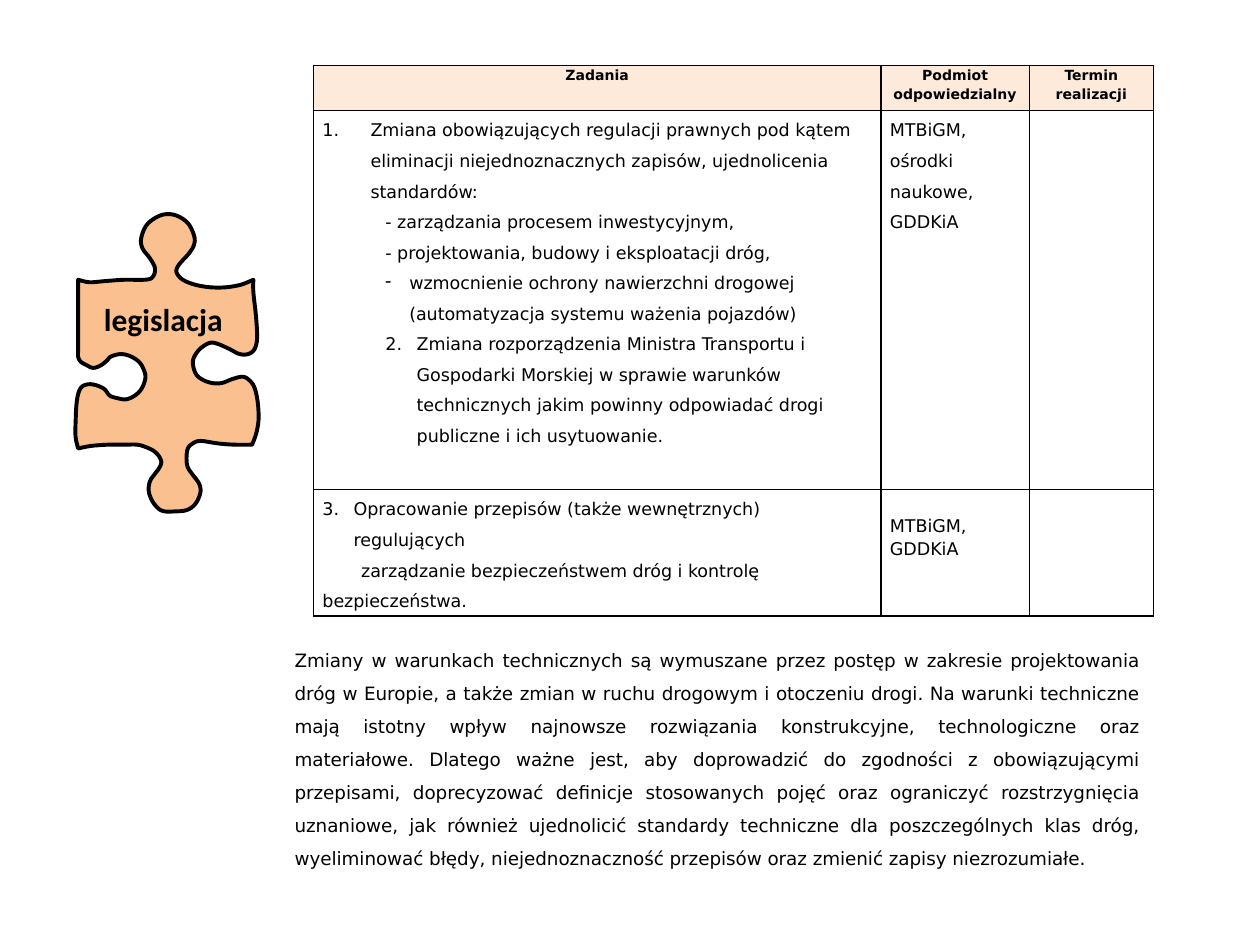
from dataclasses import dataclass

from lxml import etree
from pptx import Presentation
from pptx.dml.color import RGBColor
from pptx.enum.text import MSO_ANCHOR, PP_ALIGN
from pptx.oxml.ns import qn
from pptx.util import Cm, Pt

LEFT, CENTER, JUSTIFY = PP_ALIGN.LEFT, PP_ALIGN.CENTER, PP_ALIGN.JUSTIFY
TOP = MSO_ANCHOR.TOP


@dataclass(frozen=True)
class Theme:
    ink: str = "000000"
    header_fill: str = "FDEADA"
    puzzle_fill: str = "FAC090"
    font: str = "DejaVu Sans"
    label_font: str = "Calibri"
    label_size: float = 18
    body_size: float = 10.5
    cell_size: float = 10
    header_size: float = 8
    outline: float = 2.25
    border: float = 1


THEME = Theme()

PUZZLE_GRID = (146, 236)
PUZZLE_EDGES = [
    [(3, 52), (3, 82), (3, 106), (3, 113), (5, 117), (10, 120), (15, 122),
     (21, 120), (26, 116), (29, 113), (37, 111), (45, 113), (52, 118),
     (56, 126), (56, 132), (53, 139), (48, 144), (41, 147), (34, 146),
     (28, 144), (24, 139), (18, 136), (11, 135), (5, 138), (2, 148),
     (1, 165), (1, 177), (3, 186)],
    [(3, 186), (13, 184), (27, 183), (40, 183), (50, 183), (57, 185),
     (63, 188), (67, 192), (69, 197), (67, 202), (64, 206), (60, 212),
     (59, 220), (62, 228), (67, 234), (72, 236), (79, 236), (89, 235),
     (96, 230), (100, 221), (99, 214), (94, 207), (90, 201), (89, 194),
     (90, 186), (94, 182), (100, 180), (114, 182), (127, 183), (141, 183)],
    [(141, 183), (144, 175), (146, 165), (146, 155), (145, 146), (143, 138),
     (140, 133), (134, 129), (125, 131), (117, 134), (109, 134), (101, 131),
     (96, 126), (94, 117), (97, 110), (102, 105), (108, 102), (114, 103),
     (123, 107), (131, 111), (138, 111), (143, 107), (145, 98), (144, 80),
     (142, 62), (142, 52)],
    [(142, 52), (132, 56), (120, 58), (108, 58), (96, 56), (86, 52),
     (81, 46), (83, 40), (91, 31), (95, 24), (95, 17), (90, 7), (81, 1),
     (72, 0), (64, 3), (57, 9), (53, 19), (54, 27), (60, 35), (64, 43),
     (62, 50), (56, 52), (40, 52), (25, 53), (12, 54), (3, 52)],
]

HEADERS = [["Zadania"], ["Podmiot", "odpowiedzialny"], ["Termin realizacji"]]
LEGAL_TASKS = [
    ("Zmiana obowiązujących regulacji prawnych pod kątem eliminacji "
     "niejednoznacznych zapisów, ujednolicenia standardów:",
     dict(indent=0.97, hang=-0.97, number=1)),
    ("- zarządzania procesem inwestycyjnym,", dict(indent=1.27)),
    ("- projektowania, budowy i eksploatacji dróg,", dict(indent=1.27)),
    ("wzmocnienie ochrony nawierzchni drogowej "
     "(automatyzacja systemu ważenia pojazdów)",
     dict(indent=1.75, hang=-0.48, bullet="-")),
    ("Zmiana rozporządzenia Ministra Transportu i Gospodarki Morskiej "
     "w sprawie warunków technicznych jakim powinny odpowiadać drogi "
     "publiczne i ich usytuowanie.",
     dict(indent=1.9, hang=-0.63, number=2)),
]
SAFETY_TASKS = [
    ("Opracowanie przepisów (także wewnętrznych) regulujących",
     dict(indent=0.63, hang=-0.63, number=3)),
    ("zarządzanie bezpieczeństwem dróg i kontrolę bezpieczeństwa.",
     dict(hang=0.78)),
]
SUMMARY = (
    "Zmiany w warunkach technicznych są wymuszane przez postęp w zakresie "
    "projektowania dróg w Europie, a także zmian w ruchu drogowym i otoczeniu "
    "drogi. Na warunki techniczne mają istotny wpływ najnowsze rozwiązania "
    "konstrukcyjne, technologiczne oraz materiałowe. Dlatego ważne jest, aby "
    "doprowadzić do zgodności z obowiązującymi przepisami, doprecyzować "
    "definicje stosowanych pojęć oraz ograniczyć rozstrzygnięcia uznaniowe, "
    "jak również ujednolicić standardy techniczne dla poszczególnych klas "
    "dróg, wyeliminować błędy, niejednoznaczność przepisów oraz zmienić "
    "zapisy niezrozumiałe.")


def color(code):
    return RGBColor.from_string(code)


def write(frame, text, size=THEME.cell_size, font=THEME.font, bold=False,
          align=LEFT, spacing=1.5, indent=0, hang=0, bullet=None, number=None):
    first = frame.paragraphs[0]
    para = frame.add_paragraph() if first.runs else first
    para.alignment = align
    para.line_spacing = spacing
    props = para._p.get_or_add_pPr()
    props.set("marL", str(Cm(indent)))
    props.set("indent", str(Cm(hang)))
    if number:
        etree.SubElement(props, qn("a:buAutoNum"), type="arabicPeriod",
                         startAt=str(number))
    elif bullet:
        etree.SubElement(props, qn("a:buChar"), char=bullet)
    else:
        etree.SubElement(props, qn("a:buNone"))
    span = para.add_run()
    span.text = text
    span.font.size = Pt(size)
    span.font.name = font
    span.font.bold = bold
    span.font.color.rgb = color(THEME.ink)


def smooth_edge(points, steps=4):
    padded = [points[0], *points, points[-1]]
    for a, b, c, d in zip(padded, padded[1:], padded[2:], padded[3:]):
        for step in range(steps):
            t = step / steps
            yield tuple(
                q + t * (r - p) / 2 + t * t * (2 * p - 5 * q + 4 * r - s) / 2
                + t ** 3 * (3 * q - p - 3 * r + s) / 2
                for p, q, r, s in zip(a, b, c, d))


def add_puzzle(page, left, top, width, height):
    scale_x, scale_y = Cm(width) / PUZZLE_GRID[0], Cm(height) / PUZZLE_GRID[1]
    outline = [(x * scale_x, y * scale_y)
               for edge in PUZZLE_EDGES for x, y in smooth_edge(edge)]
    builder = page.shapes.build_freeform(*outline[0], scale=1.0)
    builder.add_line_segments(outline[1:], close=True)
    piece = builder.convert_to_shape(Cm(left), Cm(top))
    piece.shadow.inherit = False
    piece.fill.solid()
    piece.fill.fore_color.rgb = color(THEME.puzzle_fill)
    piece.line.color.rgb = color(THEME.ink)
    piece.line.width = Pt(THEME.outline)
    frame = piece.text_frame
    frame.word_wrap = False
    frame.vertical_anchor = TOP
    frame.margin_left, frame.margin_right = 0, Cm(0.15)
    frame.margin_top = Cm(height * 0.29)
    write(frame, "legislacja", size=THEME.label_size, font=THEME.label_font,
          bold=True, align=CENTER, spacing=1.0)


def style_cell(cell, fill=None):
    cell.margin_left = cell.margin_right = Cm(0.18)
    cell.margin_top = cell.margin_bottom = 0
    props = cell._tc.get_or_add_tcPr()
    for side in ("lnL", "lnR", "lnT", "lnB"):
        line = etree.SubElement(props, qn(f"a:{side}"), w=str(Pt(THEME.border)))
        paint = etree.SubElement(line, qn("a:solidFill"))
        etree.SubElement(paint, qn("a:srgbClr"), val=THEME.ink)
    if fill:
        cell.fill.solid()
        cell.fill.fore_color.rgb = color(fill)
    else:
        cell.fill.background()


def add_tasks(page, left, top, widths, heights):
    table = page.shapes.add_table(
        len(heights), len(widths), Cm(left), Cm(top),
        Cm(sum(widths)), Cm(sum(heights))).table
    table.first_row = table.horz_banding = False
    for column, width in zip(table.columns, widths):
        column.width = Cm(width)
    for index, height in enumerate(heights):
        table.rows[index].height = Cm(height)
        for cell in table.rows[index].cells:
            style_cell(cell, None if index else THEME.header_fill)
    for column, lines in enumerate(HEADERS):
        for line in lines:
            write(table.cell(0, column).text_frame, line, bold=True,
                  size=THEME.header_size, align=CENTER, spacing=1.15)
    for row, tasks in enumerate((LEGAL_TASKS, SAFETY_TASKS), start=1):
        for text, layout in tasks:
            write(table.cell(row, 0).text_frame, text, **layout)
    write(table.cell(1, 1).text_frame, "MTBiGM, ośrodki naukowe, GDDKiA")
    table.cell(2, 1).margin_top = Cm(0.47)
    write(table.cell(2, 1).text_frame, "MTBiGM, GDDKiA", spacing=1.15)


def add_summary(page, left, top, width, height):
    box = page.shapes.add_textbox(Cm(left), Cm(top), Cm(width), Cm(height))
    box.text_frame.word_wrap = True
    write(box.text_frame, SUMMARY, size=THEME.body_size, align=JUSTIFY)


def main():
    deck = Presentation()
    deck.slide_width, deck.slide_height = Cm(25.4), Cm(19.05)
    page = deck.slides.add_slide(deck.slide_layouts[6])
    add_puzzle(page, 1.5, 4.32, 3.71, 5.99)
    add_summary(page, 5.69, 12.73, 17.55, 4.88)
    add_tasks(page, 6.32, 1.32, (11.44, 2.99, 2.5), (0.91, 7.64, 2.54))
    deck.save("out.pptx")


if __name__ == "__main__":
    main()
